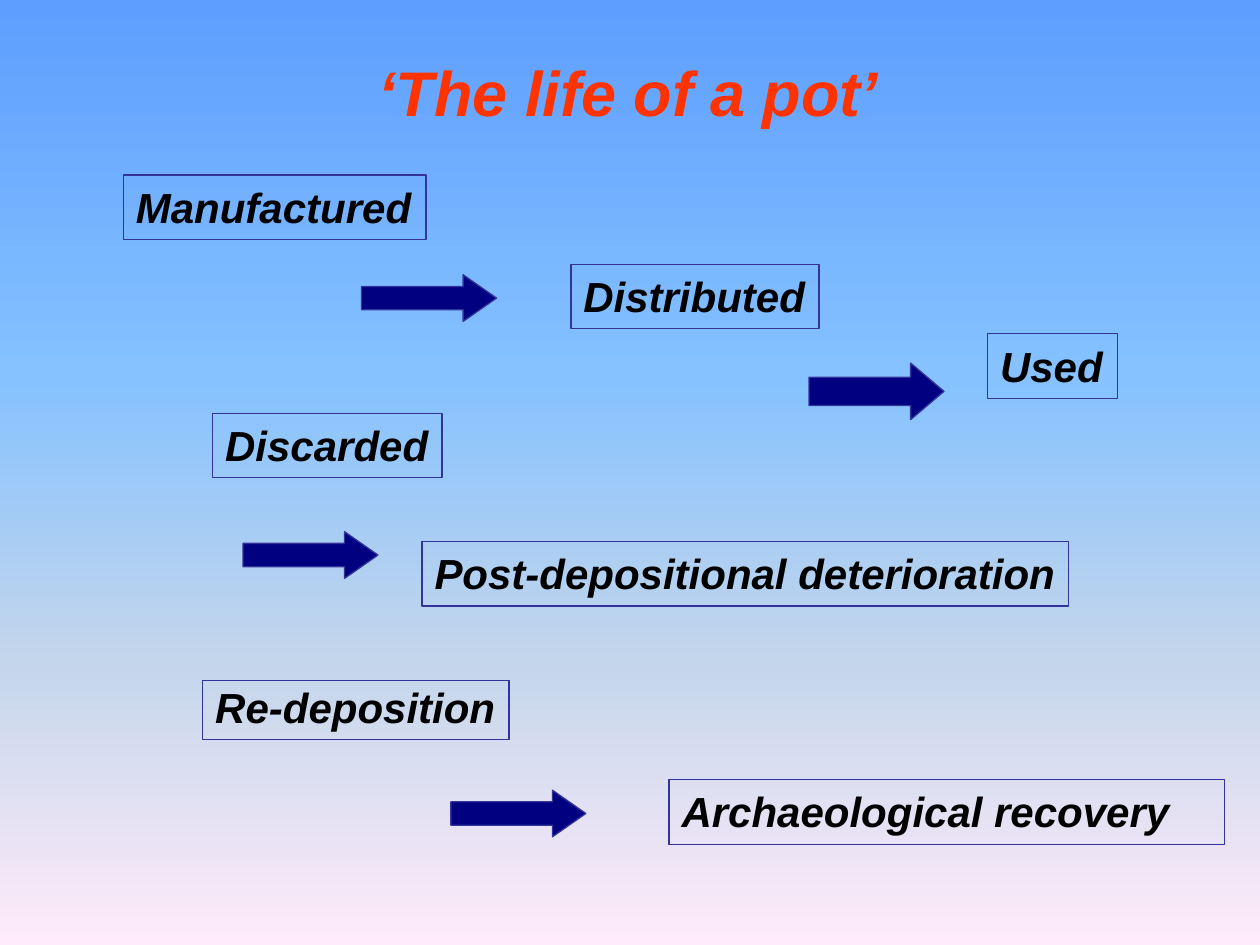
from copy import deepcopy

from pptx import Presentation
from pptx.dml.color import RGBColor
from pptx.enum.shapes import MSO_SHAPE
from pptx.enum.text import MSO_ANCHOR, MSO_AUTO_SIZE, PP_ALIGN
from pptx.oxml.ns import qn
from pptx.util import Cm, Pt

ARROW = MSO_SHAPE.RIGHT_ARROW
MIDDLE = MSO_ANCHOR.MIDDLE
GROW = MSO_AUTO_SIZE.SHAPE_TO_FIT_TEXT
CENTER = PP_ALIGN.CENTER

RED = RGBColor(0xFF, 0x33, 0x00)
BLACK = RGBColor(0x00, 0x00, 0x00)
NAVY = RGBColor(0x00, 0x00, 0x80)
INDIGO = RGBColor(0x33, 0x33, 0x99)
SKY = [
    (0, RGBColor(0x5E, 0x9E, 0xFF)),
    (0.4, RGBColor(0x85, 0xC2, 0xFF)),
    (0.7, RGBColor(0xC4, 0xD6, 0xEB)),
    (1, RGBColor(0xFF, 0xEB, 0xFA)),
]

# text, left, top, width, height, wrap, line spacing
STAGES = [
    ("Manufactured", 2.49, 3.53, 6.1, 1.3, False, 1.0),
    ("Distributed", 11.51, 5.33, 5, 1.3, True, 1.0),
    ("Used", 19.91, 6.73, 2.62, 1.3, False, 1.0),
    ("Discarded", 4.29, 8.33, 4.62, 1.3, False, 1.0),
    ("Post-depositional deterioration", 8.51, 10.92, 13.03, 1.3, False, 1.0),
    ("Re-deposition", 4.09, 13.72, 6.17, 1.19, False, 0.9),
    ("Archaeological recovery", 13.49, 15.72, 11.2, 1.3, True, 1.0),
]

# left, top, height, head length
ARROWS = [
    (7.29, 5.54, 0.94, 0.715),
    (16.31, 7.32, 1.14, 0.589),
    (4.9, 10.72, 0.94, 0.715),
    (9.09, 15.93, 0.94, 0.715),
]


def add_text(text, left, top, width, height, size, color):
    box = slide.shapes.add_textbox(Cm(left), Cm(top), Cm(width), Cm(height))
    para = box.text_frame.paragraphs[0]
    para.text = text
    font = para.font
    font.name = "Arial"
    font.size = Pt(size)
    font.bold = font.italic = True
    font.color.rgb = color
    return box, para


def outline(shape):
    shape.line.color.rgb = INDIGO
    shape.line.width = Pt(0.75)


prs = Presentation()
prs.slide_width = Cm(25.4)
prs.slide_height = Cm(19.05)
slide = prs.slides.add_slide(prs.slide_layouts[6])

# Background
fill = slide.background.fill
fill.gradient()
fill.gradient_angle = 270
stops = slide.element.find(".//" + qn("a:gsLst"))
while len(stops) < len(SKY):
    stops.append(deepcopy(stops[0]))
for stop, (place, color) in zip(fill.gradient_stops, SKY):
    stop.position = place
    stop.color.rgb = color

# Title
title, para = add_text("‘The life of a pot’", 2.49, 0.76, 20.37, 2.16, 36, RED)
title.text_frame.word_wrap = True
title.text_frame.vertical_anchor = MIDDLE
para.alignment = CENTER

# Stages
for text, left, top, width, height, wrap, space in STAGES:
    box, para = add_text(text, left, top, width, height, 24, BLACK)
    box.text_frame.word_wrap = wrap
    box.text_frame.auto_size = GROW
    para.line_spacing = space
    outline(box)

# Arrows
for left, top, height, head in ARROWS:
    arrow = slide.shapes.add_shape(ARROW, Cm(left), Cm(top), Cm(2.72), Cm(height))
    arrow.adjustments[1] = head
    arrow.shadow.inherit = False
    arrow.fill.solid()
    arrow.fill.fore_color.rgb = NAVY
    outline(arrow)

prs.save("out.pptx")
